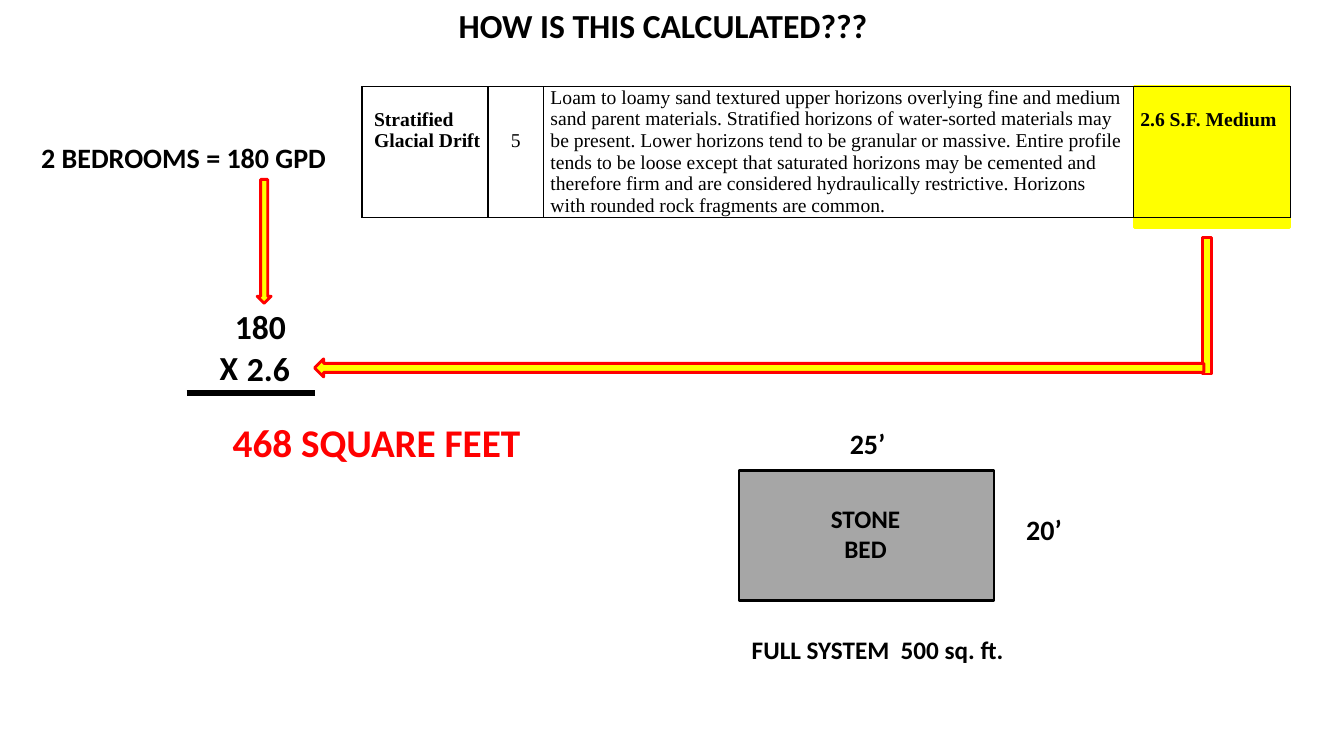
from lxml.etree import SubElement
from pptx import Presentation
from pptx.dml.color import RGBColor
from pptx.enum.shapes import MSO_CONNECTOR, MSO_SHAPE as Shape
from pptx.enum.text import PP_ALIGN as Align
from pptx.oxml.ns import qn
from pptx.util import Pt

PX = 9144
COLORS = {"black": "000000", "red": "FF0000", "yellow": "FFFF00", "gray": "A6A6A6"}
SERIF, SANS = "Times New Roman", "Calibri"

SHAPES = [
    (Shape.RECTANGLE, (1125, 86, 154, 140), "yellow", "yellow"),
    (Shape.DOWN_ARROW, (255, 178, 14, 123), "yellow", "red"),
    (Shape.RECTANGLE, (1193, 236, 9, 135), "yellow", "red"),
    (Shape.LEFT_ARROW, (312, 356, 882, 18), "yellow", "red"),
    (Shape.RECTANGLE, (733, 467, 253, 129), "gray", "black"),
]
RULE = (185, 390, 312, 390)

SOIL_BOX = (359, 86, 920, 130)
SOIL = [
    ("Stratified Glacial Drift", 125, 12, 22, Align.LEFT, True),
    ("5", 55, 7, 43, Align.CENTER, False),
    ("Loam to loamy sand textured upper horizons overlying fine and medium sand "
     "parent materials. Stratified horizons of water-sorted materials may be present. "
     "Lower horizons tend to be granular or massive. Entire profile tends to be loose "
     "except that saturated horizons may be cemented and therefore firm and are "
     "considered hydraulically restrictive. Horizons with rounded rock fragments are "
     "common.", 585, 7, 0, Align.LEFT, False),
    ("2.6 S.F. Medium", 156, 7, 22, Align.LEFT, True),
]

TEXTS = [
    ("HOW IS THIS CALCULATED???", (445, 0, 432, 50), 24, "black", Align.LEFT),
    ("2 BEDROOMS = 180 GPD", (31, 134, 328, 44), 20, "black", Align.LEFT),
    ("180\nX", (208, 299, 109, 91), 24, "black", Align.LEFT),
    ("2.6", (235, 340, 69, 50), 24, "black", Align.LEFT),
    ("468 SQUARE FEET", (221, 410, 322, 57), 28, "red", Align.LEFT),
    ("25’", (833, 418, 88, 44), 20, "black", Align.LEFT),
    ("20’", (1008, 504, 78, 44), 20, "black", Align.LEFT),
    ("STONE\nBED", (767, 494, 183, 71), 18, "black", Align.CENTER),
    ("FULL SYSTEM  500 sq. ft.", (733, 624, 275, 40), 18, "black", Align.CENTER),
]
INDENT = 15


def emu(box):
    return [n * PX for n in box]


def rgb(name):
    return RGBColor.from_string(COLORS[name])


def style(frame, font, size, color, align, bold):
    frame.word_wrap = True
    for para in frame.paragraphs:
        para.alignment = align
        for run in para.runs:
            run.font.name = font
            run.font.size = Pt(size)
            run.font.bold = bold
            run.font.color.rgb = rgb(color)


def add_shape(slide, kind, box, fill, line):
    shape = slide.shapes.add_shape(kind, *emu(box))
    shape.shadow.inherit = False
    shape.fill.solid()
    shape.fill.fore_color.rgb = rgb(fill)
    shape.line.color.rgb = rgb(line)
    shape.line.width = Pt(2)


def add_border(cell):
    props = cell._tc.get_or_add_tcPr()
    for spot, side in enumerate(("lnL", "lnR", "lnT", "lnB")):
        line = SubElement(props, qn("a:" + side), w=str(Pt(1)))
        fill = SubElement(line, qn("a:solidFill"))
        SubElement(fill, qn("a:srgbClr"), val=COLORS["black"])
        props.insert(spot, line)


def add_soil(slide):
    table = slide.shapes.add_table(1, len(SOIL), *emu(SOIL_BOX)).table
    table.first_row = table.horz_banding = False
    for col, (text, width, left, top, align, bold) in enumerate(SOIL):
        table.columns[col].width = width * PX
        cell = table.cell(0, col)
        cell.fill.background()
        cell.margin_left, cell.margin_right = left * PX, 7 * PX
        cell.margin_top, cell.margin_bottom = top * PX, 0
        cell.text_frame.text = text
        style(cell.text_frame, SERIF, 14, "black", align, bold)
        add_border(cell)


def add_text(slide, text, box, size, color, align):
    frame = slide.shapes.add_textbox(*emu(box)).text_frame
    frame.text = text
    style(frame, SANS, size, color, align, True)
    return frame


def add_rule(slide):
    rule = slide.shapes.add_connector(MSO_CONNECTOR.STRAIGHT, *emu(RULE))
    rule.line.color.rgb = rgb("black")
    rule.line.width = Pt(4.5)
    SubElement(rule._element.spPr, qn("a:effectLst"))


def main():
    deck = Presentation()
    deck.slide_width, deck.slide_height = emu((1333, 750))
    slide = deck.slides.add_slide(deck.slide_layouts[6])
    for item in SHAPES:
        add_shape(slide, *item)
    add_soil(slide)
    frames = [add_text(slide, *item) for item in TEXTS]
    factor = frames[2].paragraphs[0]
    factor._p.get_or_add_pPr().set("marL", str(INDENT * PX))
    add_rule(slide)
    deck.save("out.pptx")


if __name__ == "__main__":
    main()
